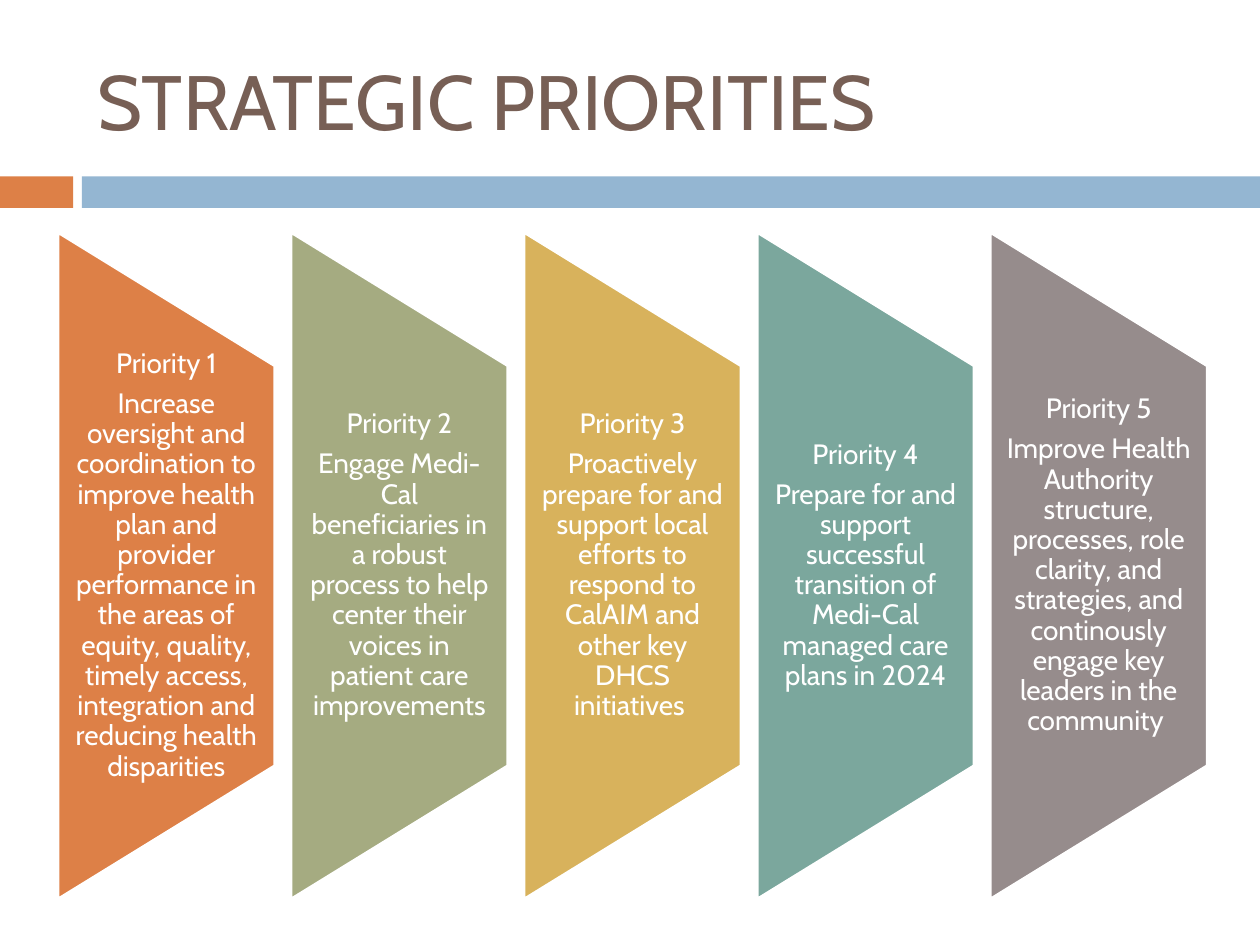
from typing import NamedTuple

from pptx import Presentation
from pptx.dml.color import RGBColor
from pptx.enum.shapes import MSO_SHAPE as Kind
from pptx.enum.text import MSO_ANCHOR as Anchor, MSO_AUTO_SIZE as Auto, PP_ALIGN as Align
from pptx.util import Inches, Pt

WIDE, HIGH = 10, 7.5
FONT, WHITE = "Cabin", "FFFFFF"

# Column grid: five equal panels, centred on one line
LEFT, STEP, COL = 0.46, 1.85, 1.72
MID, TALL, BODY = 4.49, 5.29, 3.17


class Band(NamedTuple):
    left: float
    width: float
    fill: str


class Panel(NamedTuple):
    fill: str
    text: str


BANDS = [Band(0, 0.58, "DD8047"), Band(0.65, WIDE - 0.65, "94B6D2")]

PANELS = [
    Panel("DD8047", "Increase oversight and coordination to improve health plan and "
          "provider performance in the areas of equity, quality, timely access, "
          "integration and reducing health disparities"),
    Panel("A5AB81", "Engage Medi-Cal beneficiaries in a robust process to help center "
          "their voices in patient care improvements"),
    Panel("D8B25C", "Proactively prepare for and support local efforts to respond to "
          "CalAIM and other key DHCS initiatives "),
    Panel("7BA79D", "Prepare for and support successful transition of Medi-Cal managed "
          "care plans in 2024"),
    Panel("968C8C", "Improve Health Authority structure, processes, role clarity, and "
          "strategies, and continously engage key leaders in the community "),
]


def tint(code: str) -> RGBColor:
    return RGBColor.from_string(code)


def put(item, **values) -> None:
    for name, value in values.items():
        setattr(item, name, value)


def place(left: float, top: float, width: float, height: float) -> dict:
    sides = dict(left=left, top=top, width=width, height=height)
    return {name: Inches(size) for name, size in sides.items()}


def write(para, text: str, size: float, color: str, **form) -> None:
    put(para, **form)
    run = para.add_run()
    run.text = text
    put(run.font, name=FONT, size=Pt(size))
    run.font.color.rgb = tint(color)


def draw(slide, kind: Kind, box: dict, fill: str):
    shape = slide.shapes.add_shape(kind, *box.values())
    shape.shadow.inherit = False
    shape.fill.solid()
    shape.fill.fore_color.rgb = tint(fill)
    shape.line.fill.background()
    return shape


def add_panel(slide, num: int, panel: Panel) -> None:
    left = LEFT + num * STEP
    # The outline lies on its side: its long edge becomes the left edge
    box = place(left + (COL - TALL) / 2, MID - COL / 2, TALL, COL)
    shape = draw(slide, Kind.FLOWCHART_MANUAL_OPERATION, box, panel.fill)
    shape.rotation = 270
    shape.line.color.rgb = tint(WHITE)
    shape.line.width = Pt(1.5)

    # Upright text over the panel
    box = place(left, MID - BODY / 2, COL, BODY)
    frame = slide.shapes.add_textbox(*box.values()).text_frame
    put(frame, word_wrap=True, vertical_anchor=Anchor.MIDDLE,
        margin_left=Inches(0.11), margin_right=Inches(0.11),
        margin_top=0, margin_bottom=0)
    form = dict(alignment=Align.CENTER, line_spacing=0.9, space_after=Pt(5.6))
    write(frame.paragraphs[0], f"Priority {num + 1}", 16, WHITE, **form)
    write(frame.add_paragraph(), panel.text, 16, WHITE, **form)


def main() -> None:
    deck = Presentation()
    put(deck, slide_width=Inches(WIDE), slide_height=Inches(HIGH))
    slide = deck.slides.add_slide(deck.slide_layouts[5])

    # Title
    title = slide.shapes.title
    put(title, **place(0.67, 0.25, 8.92, 1.08))
    put(title.text_frame, vertical_anchor=Anchor.MIDDLE, auto_size=Auto.NONE,
        word_wrap=True)
    write(title.text_frame.paragraphs[0], "STRATEGIC PRIORITIES", 44, "775F55",
          alignment=Align.LEFT)

    # Bands under the title
    for band in BANDS:
        draw(slide, Kind.RECTANGLE, place(band.left, 1.4, band.width, 0.25), band.fill)

    # Priorities
    for num, panel in enumerate(PANELS):
        add_panel(slide, num, panel)

    deck.save("out.pptx")


if __name__ == "__main__":
    main()
